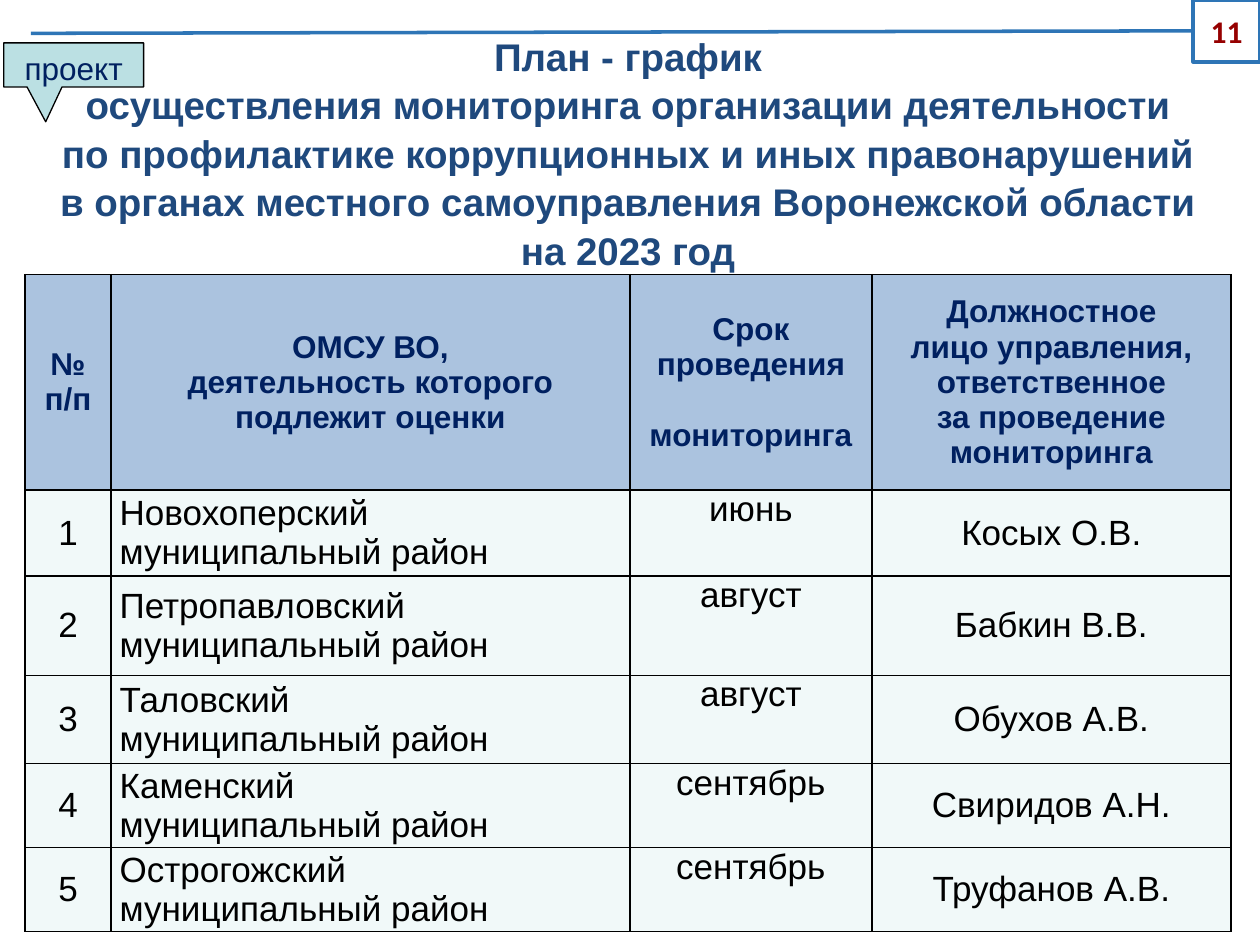
from pptx import Presentation
from pptx.dml.color import RGBColor
from pptx.enum.shapes import MSO_SHAPE as Shape
from pptx.enum.text import MSO_ANCHOR as Anchor, PP_ALIGN as Align
from pptx.oxml import parse_xml
from pptx.oxml.ns import nsdecls
from pptx.util import Inches, Pt

TITLE = [
    "План - график",
    "осуществления мониторинга организации деятельности",
    "по профилактике коррупционных и иных правонарушений",
    "в органах местного самоуправления Воронежской области на 2023 год",
]
HEADERS = [
    ["№", "п/п"],
    ["ОМСУ ВО,", "деятельность которого подлежит оценки"],
    ["Срок проведения", "мониторинга"],
    ["Должностное", "лицо управления, ответственное", "за проведение мониторинга"],
]
SCHEDULE = [
    ("Новохоперский", "июнь", "Косых О.В."),
    ("Петропавловский", "август", "Бабкин В.В."),
    ("Таловский", "август", "Обухов А.В."),
    ("Каменский", "сентябрь", "Свиридов А.Н."),
    ("Острогожский", "сентябрь", "Труфанов А.В."),
]
COLUMN_WIDTHS = [0.68, 4.12, 1.92, 2.85]
ROW_HEIGHTS = [1.71, 0.68, 0.79, 0.7, 0.65, 0.65]


def color(value):
    return RGBColor.from_string(value)


class SlideBuilder:
    """Holds the slide and its style and adds each kind of element."""

    navy = "002060"
    header_fill = "ABC3DF"
    body_fill = "F1F9F9"

    def __init__(self, slide):
        self.slide = slide

    def text_run(self, paragraph, text, size, hex_color, bold=False, font="Arial", align=Align.CENTER):
        paragraph.alignment = align
        run = paragraph.add_run()
        run.text = text
        run.font.name = font
        run.font.size = Pt(size)
        run.font.bold = bold
        run.font.color.rgb = color(hex_color)

    def title(self, lines, left, top, width, height):
        box = self.slide.shapes.add_textbox(*map(Inches, (left, top, width, height)))
        frame = box.text_frame
        frame.word_wrap = True
        frame.vertical_anchor = Anchor.MIDDLE
        paragraph = frame.paragraphs[0]
        paragraph.line_spacing = 1.05
        for index, line in enumerate(lines):
            if index:
                paragraph.add_line_break()
            self.text_run(paragraph, line, 22, "1F497D", bold=True)

    def callout(self, kind, bounds, adjustments, text, line, line_width, fill=None,
                anchor=Anchor.MIDDLE, **text_style):
        shape = self.slide.shapes.add_shape(kind, *map(Inches, bounds))
        shape.shadow.inherit = False
        for index, value in enumerate(adjustments):
            shape.adjustments[index] = value
        if fill:
            shape.fill.solid()
            shape.fill.fore_color.rgb = color(fill)
        else:
            shape.fill.background()
        shape.line.color.rgb = color(line)
        shape.line.width = Pt(line_width)
        shape.text_frame.vertical_anchor = anchor
        self.text_run(shape.text_frame.paragraphs[0], text, 18, **text_style)

    def border(self, cell):
        properties = cell._tc.get_or_add_tcPr()
        for index, side in enumerate(("lnL", "lnR", "lnT", "lnB")):
            properties.insert(index, parse_xml(
                f'<a:{side} {nsdecls("a")} w="12700"><a:solidFill>'
                f'<a:srgbClr val="000000"/></a:solidFill></a:{side}>'))

    def cell(self, cell, lines, fill, anchor=Anchor.MIDDLE, tight=False, gap=0, **text_style):
        cell.fill.solid()
        cell.fill.fore_color.rgb = color(fill)
        cell.vertical_anchor = anchor
        if tight:
            cell.margin_left = cell.margin_right = Inches(0.07)
            cell.margin_top = cell.margin_bottom = 0
        frame = cell.text_frame
        for index, line in enumerate(lines):
            paragraph = frame.add_paragraph() if index else frame.paragraphs[0]
            if index:
                paragraph.space_before = Pt(gap)
            self.text_run(paragraph, line, **text_style)
        self.border(cell)

    def table(self, left, top):
        size = sum(COLUMN_WIDTHS), sum(ROW_HEIGHTS)
        table = self.slide.shapes.add_table(
            len(ROW_HEIGHTS), len(COLUMN_WIDTHS), *map(Inches, (left, top, *size))).table
        for column, width in zip(table.columns, COLUMN_WIDTHS):
            column.width = Inches(width)
        for row, height in zip(table.rows, ROW_HEIGHTS):
            row.height = Inches(height)
        for index, lines in enumerate(HEADERS):
            self.cell(table.cell(0, index), lines, self.header_fill, gap=20 if index == 2 else 0,
                      size=18, hex_color=self.navy, bold=True)
        for number, (district, month, officer) in enumerate(SCHEDULE, 1):
            texts = [[str(number)], [district, "муниципальный район"], [month], [officer]]
            for index, lines in enumerate(texts):
                self.cell(table.cell(number, index), lines, self.body_fill,
                          anchor=Anchor.TOP if index == 2 else Anchor.MIDDLE, tight=index > 0,
                          size=20, hex_color="000000",
                          align=Align.LEFT if index == 1 else Align.CENTER)


def main():
    presentation = Presentation()
    presentation.slide_width = Inches(10)
    presentation.slide_height = Inches(7.5)
    builder = SlideBuilder(presentation.slides.add_slide(presentation.slide_layouts[6]))
    builder.title(TITLE, 0.2, 0.34, 9.57, 1.73)
    builder.table(0.2, 2.18)
    builder.callout(Shape.LINE_CALLOUT_1, (9.47, 0, 0.53, 0.49), (0.5, -0.01, 0.54, -17.41), "11",
                    "2E75B6", 2, hex_color="960000", bold=True, font="Calibri")
    builder.callout(Shape.RECTANGULAR_CALLOUT, (0.03, 0.34, 1.11, 0.35), (-0.2, 1.29), "проект",
                    "000000", 0.75, fill="BBE0E3", anchor=Anchor.TOP, hex_color=builder.navy)
    presentation.save("out.pptx")


if __name__ == "__main__":
    main()
